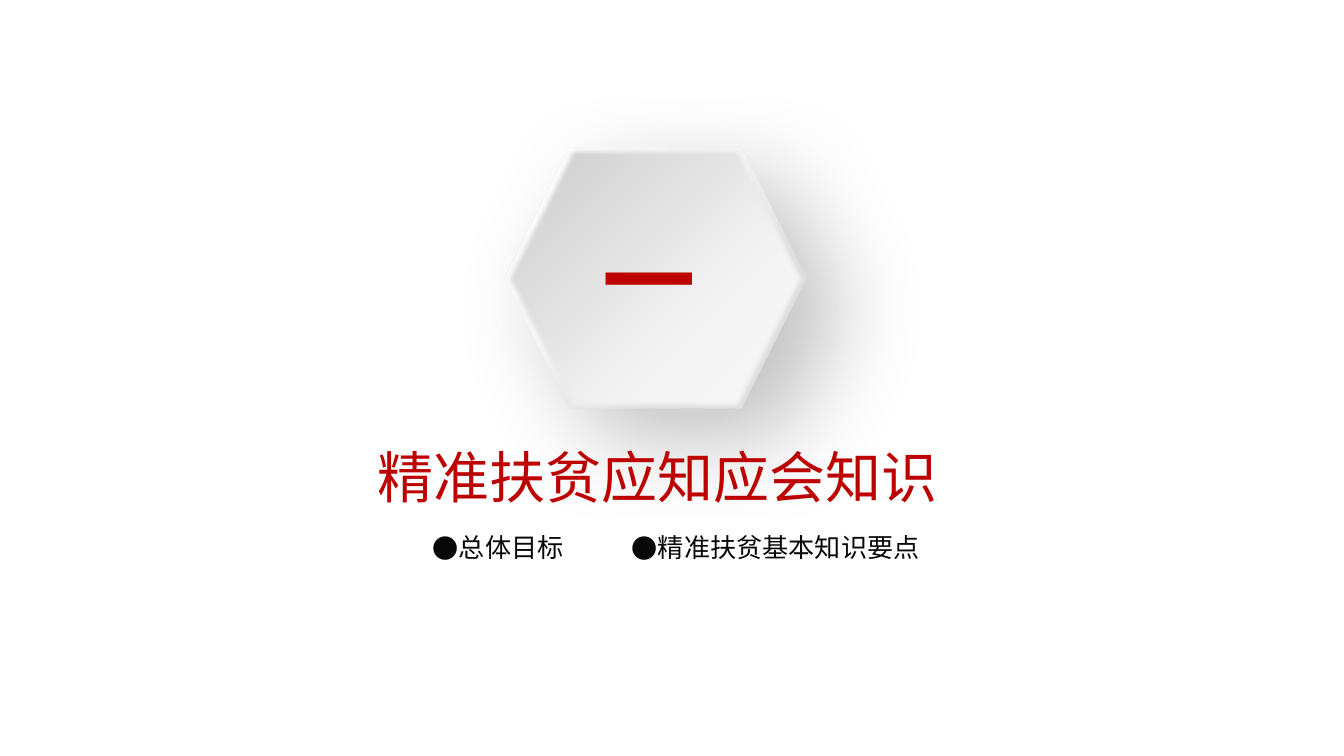
from dataclasses import dataclass

from lxml.etree import SubElement
from pptx import Presentation
from pptx.dml.color import RGBColor
from pptx.enum.shapes import MSO_SHAPE as Shape
from pptx.enum.text import MSO_ANCHOR as Anchor
from pptx.oxml import parse_xml
from pptx.oxml.ns import nsdecls, qn
from pptx.util import Cm, Pt


@dataclass(frozen=True)
class Theme:
    font: str = "Noto Sans CJK SC"
    red: str = "BD0000"
    ink: str = "080808"
    shadow: str = "696969"
    number_size: int = 50
    title_size: int = 30
    topic_size: int = 14


@dataclass(frozen=True)
class Gradient:
    stops: tuple[tuple[int, str], ...]
    angle: int


@dataclass(frozen=True)
class Label:
    text: str
    left: float
    top: float
    width: float
    height: float
    size: int
    color: str
    bold: bool = False
    wrap: bool = True
    bullet: bool = False
    margins: tuple[float, float] = (0, 0)


THEME = Theme()
RIM = Gradient(((1, "DEDEDE"), (30, "E0E0E0"), (61, "F6F6F6"), (100, "FFFFFF")), 225)
FACE = Gradient(((0, "CBCBCB"), (32, "DEDEDE"), (64, "F3F3F3"), (100, "F9F9F9")), 45)
DROP_SHADOW = (
    f'<a:outerShdw blurRad="{Pt(49)}" dist="{Pt(25)}" dir="{40 * 60000}" '
    f'algn="tl" rotWithShape="0"><a:srgbClr val="{THEME.shadow}">'
    '<a:alpha val="40000"/></a:srgbClr></a:outerShdw>'
)
SOFT_EDGE = f'<a:softEdge rad="{Pt(2.5)}"/>'

NUMBER = Label("一", 11.38, 4.19, 4.14, 2.13, THEME.number_size, THEME.red, bold=True)
TITLE = Label("精准扶贫应知应会知识", 6.88, 8.23, 11.1, 1.52, THEME.title_size,
              THEME.red, wrap=False, margins=(0.25, 0.13))
TOPICS = ("总体目标", "精准扶贫基本知识要点")
TOPIC_LEFT, TOPIC_STEP = 8.18, 3.76


def add_hexagon(shapes, gradient: Gradient, effect: str) -> None:
    hexagon = shapes.add_shape(Shape.HEXAGON, Cm(9.53), Cm(2.79), Cm(5.72), Cm(4.93))
    hexagon.line.fill.background()
    stops = "".join(
        f'<a:gs pos="{position * 1000}"><a:srgbClr val="{color}"/></a:gs>'
        for position, color in gradient.stops
    )
    properties = hexagon.element.spPr
    properties.find(qn("a:prstGeom")).addnext(parse_xml(
        f'<a:gradFill {nsdecls("a")} rotWithShape="1"><a:gsLst>{stops}</a:gsLst>'
        f'<a:lin ang="{gradient.angle * 60000}" scaled="0"/></a:gradFill>'
    ))
    properties.append(parse_xml(
        f'<a:effectLst {nsdecls("a")}>{effect}</a:effectLst>'
    ))


def add_bullet(para) -> None:
    properties = para._p.get_or_add_pPr()
    properties.set("marL", str(Cm(0.48)))
    properties.set("indent", str(-Cm(0.48)))
    SubElement(properties, qn("a:buFont")).set("typeface", THEME.font)
    SubElement(properties, qn("a:buChar")).set("char", "●")


def add_label(shapes, label: Label) -> None:
    box = shapes.add_textbox(Cm(label.left), Cm(label.top),
                             Cm(label.width), Cm(label.height))
    frame = box.text_frame
    frame.word_wrap = label.wrap
    frame.vertical_anchor = Anchor.MIDDLE
    side, edge = label.margins
    frame.margin_left = frame.margin_right = Cm(side)
    frame.margin_top = frame.margin_bottom = Cm(edge)
    frame.text = label.text
    para = frame.paragraphs[0]
    if label.bullet:
        add_bullet(para)
    span = para.runs[0]
    span.font.size = Pt(label.size)
    span.font.bold = label.bold
    span.font.color.rgb = RGBColor.from_string(label.color)
    span.font.name = THEME.font
    SubElement(span.font._element, qn("a:ea")).set("typeface", THEME.font)


def main() -> None:
    deck = Presentation()
    deck.slide_width, deck.slide_height = Cm(25.4), Cm(14.28)
    page = deck.slides.add_slide(deck.slide_layouts[6])

    badge = page.shapes.add_group_shape()
    add_hexagon(badge.shapes, RIM, DROP_SHADOW)
    add_hexagon(badge.shapes, FACE, SOFT_EDGE)
    add_label(badge.shapes, NUMBER)

    add_label(page.shapes, TITLE)
    for index, topic in enumerate(TOPICS):
        add_label(page.shapes, Label(topic, TOPIC_LEFT + index * TOPIC_STEP, 10.03,
                                     5.59, 0.61, THEME.topic_size, THEME.ink,
                                     bullet=True))
    deck.save("out.pptx")


if __name__ == "__main__":
    main()
